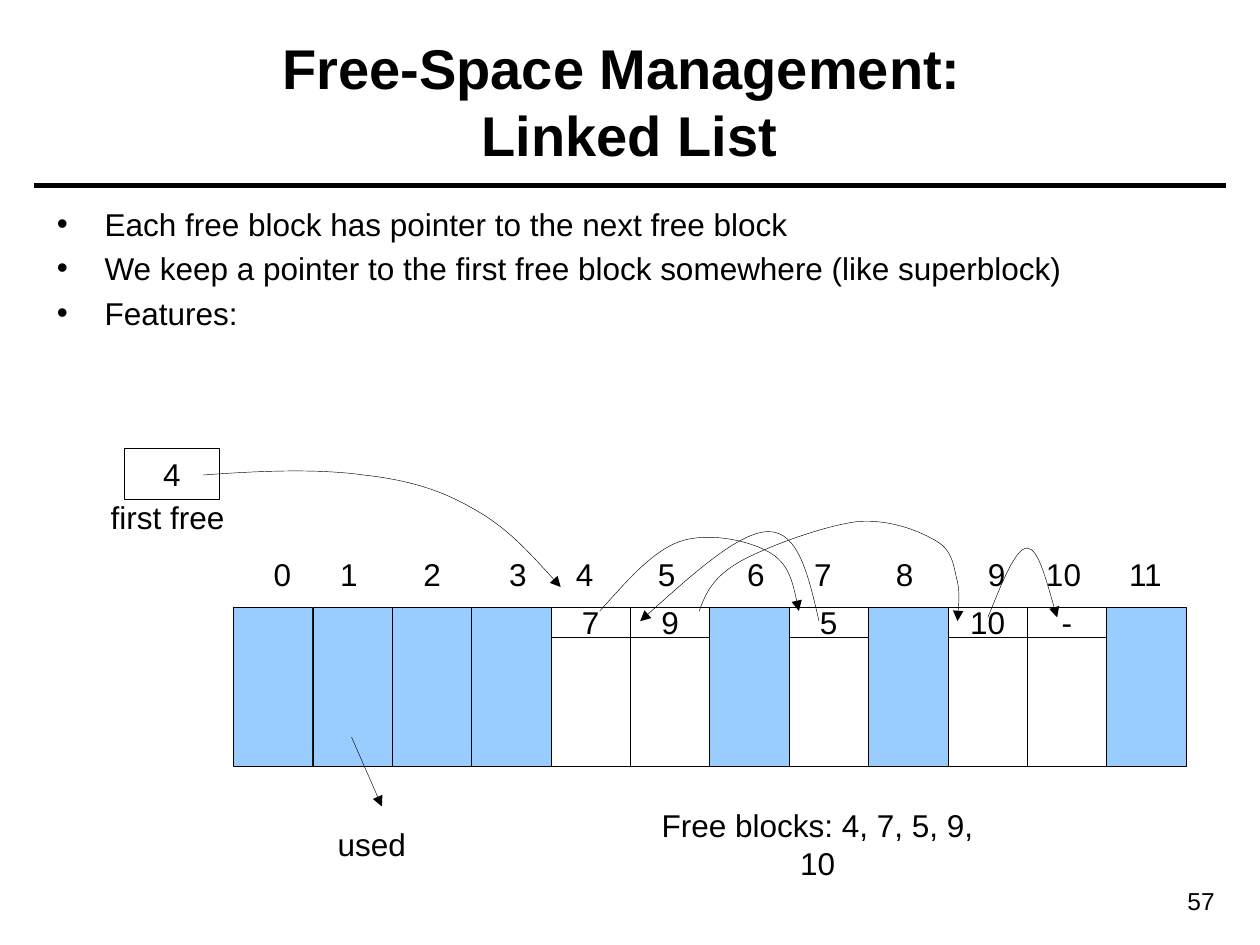
from dataclasses import dataclass
from typing import NamedTuple

from lxml import etree
from pptx import Presentation
from pptx.dml.color import RGBColor
from pptx.enum.shapes import MSO_CONNECTOR, MSO_SHAPE
from pptx.enum.text import MSO_ANCHOR, MSO_AUTO_SIZE, PP_ALIGN
from pptx.oxml.ns import qn
from pptx.util import Pt

LEFT, MID, RIGHT = PP_ALIGN.LEFT, PP_ALIGN.CENTER, PP_ALIGN.RIGHT
CENTRE = MSO_ANCHOR.MIDDLE
FIXED = MSO_AUTO_SIZE.NONE
RECT = MSO_SHAPE.RECTANGLE
STRAIGHT = MSO_CONNECTOR.STRAIGHT


@dataclass(frozen=True)
class Theme:
    font: str = "Arial"
    ink: RGBColor = RGBColor(0, 0, 0)
    used: RGBColor = RGBColor(0x99, 0xCC, 0xFF)
    title: float = 32
    body: float = 18
    page: float = 14
    thin: float = 0.25
    thick: float = 3


THEME = Theme()


class Box(NamedTuple):
    x: float
    y: float
    w: float
    h: float


class Label(NamedTuple):
    text: str
    box: Box
    size: float = THEME.body
    align: PP_ALIGN = MID
    wrap: bool = False


# Disk blocks: links maps each free block to the text of its pointer
LINKS = {4: "7", 5: "9", 7: "5", 9: "10", 10: "-"}
GRID = Box(133.4, 347, 45.36, 90.7)
STRIP = 17
TAG = 48  # wide enough for two digits plus the insets
CENTRES = [161.3, 199.4, 247, 295.9, 334.1, 380.9,
           432, 470.2, 517, 569.5, 607.7, 654.5]

BULLETS = [
    "Each free block has pointer to the next free block",
    "We keep a pointer to the first free block somewhere (like superblock)",
    "Features:",
]

LABELS = [
    Label("first free", Box(56.2, 280.8, 79.2, 28.8)),
    Label("used", Box(185.8, 468, 53.3, 28.8)),
    Label("Free blocks: 4, 7, 5, 9, 10", Box(370, 457.2, 194.4, 50), wrap=True),
    Label("57", Box(626.4, 502.6, 74.9, 24.5), THEME.page, RIGHT),
]

# Pointer curves: a start, then three points for each cubic piece
CURVES = [
    [(116, 271.5), (149, 269), (182, 267.8), (208, 271.5),
     (233.3, 274.3), (252, 280), (270.7, 290.9),
     (290.2, 301.7), (305.3, 319), (320.4, 335.5)],
    [(342.7, 349.2), (357.8, 332.6), (372.2, 315.4), (388.1, 309.6),
     (404.6, 303.8), (427.7, 308.9), (439.2, 315.4),
     (450.7, 321.8), (453.6, 335.5), (456.5, 349.2)],
    [(468, 355), (462.2, 329.8), (456.5, 303.8), (439.2, 303.8),
     (422.6, 303.8), (393.8, 329.8), (365.8, 355)],
    [(399.6, 349.2), (403.2, 339.1), (407.5, 329.8), (422.6, 321.1),
     (437.8, 312.5), (471.6, 300.2), (490.3, 298.1),
     (509, 296.6), (526.3, 303.8), (535.7, 309.6),
     (545, 315.4), (545, 324.7), (547.2, 332.6),
     (548.6, 339.8), (547.2, 354.2), (547.2, 355)],
    [(564.5, 352.8), (572.4, 333.4), (580.3, 313.2), (586.8, 313.2),
     (593.3, 313.2), (598.3, 333.4), (604.1, 352.8)],
]


def style(para, size: float, align: PP_ALIGN, bold: bool = False) -> None:
    para.alignment = align
    font = para.font
    font.name, font.size, font.bold = THEME.font, Pt(size), bold
    font.color.rgb = THEME.ink


def stroke(shape, width: float, arrow: bool = False) -> None:
    shape.line.color.rgb = THEME.ink
    shape.line.width = Pt(width)
    if arrow:
        line = shape._element.spPr.find(qn("a:ln"))
        etree.SubElement(line, qn("a:tailEnd"), type="triangle")


def add_label(slide, label: Label) -> None:
    frame = slide.shapes.add_textbox(*map(Pt, label.box)).text_frame
    frame.word_wrap = label.wrap
    frame.text = label.text
    style(frame.paragraphs[0], label.size, label.align)


def add_cell(slide, box: Box, text: str = "", fill: RGBColor | None = None) -> None:
    cell = slide.shapes.add_shape(RECT, *map(Pt, box))
    cell.shadow.inherit = False
    if fill is None:
        cell.fill.background()
    else:
        cell.fill.solid()
        cell.fill.fore_color.rgb = fill
    stroke(cell, THEME.thin)
    if text:
        frame = cell.text_frame
        frame.text = text
        frame.word_wrap = False
        frame.vertical_anchor = CENTRE
        style(frame.paragraphs[0], THEME.body, MID)


def add_line(slide, start: tuple[float, float], end: tuple[float, float],
             width: float, arrow: bool = False) -> None:
    line = slide.shapes.add_connector(STRAIGHT, *map(Pt, start + end))
    stroke(line, width, arrow)
    etree.SubElement(line._element.spPr, qn("a:effectLst"))


def add_curve(slide, points: list[tuple[float, float]]) -> None:
    start, *rest = [(Pt(x), Pt(y)) for x, y in points]
    pen = slide.shapes.build_freeform(*start)
    pen.add_line_segments(rest, close=False)
    curve = pen.convert_to_shape()
    curve.shadow.inherit = False
    curve.fill.background()
    stroke(curve, THEME.thin, arrow=True)
    # Join each three straight steps into one cubic step
    steps = list(curve._element.iter(qn("a:lnTo")))
    for i in range(0, len(steps), 3):
        cubic = etree.Element(qn("a:cubicBezTo"))
        steps[i].addprevious(cubic)
        for step in steps[i:i + 3]:
            cubic.append(step[0])
            step.getparent().remove(step)


def add_title(slide, text: str, box: Box) -> None:
    title = slide.shapes.title
    title.left, title.top, title.width, title.height = map(Pt, box)
    frame = title.text_frame
    frame.text = text
    frame.auto_size = FIXED
    frame.vertical_anchor = CENTRE
    style(frame.paragraphs[0], THEME.title, MID, bold=True)


def add_bullets(slide, lines: list[str], box: Box) -> None:
    frame = slide.shapes.add_textbox(*map(Pt, box)).text_frame
    frame.word_wrap = True
    frame.text = "\n".join(lines)
    for i, para in enumerate(frame.paragraphs):
        style(para, THEME.body, LEFT)
        para.space_before = Pt(3.8 if i else 0)
        props = para._p.get_or_add_pPr()
        props.set("marL", str(Pt(27.3)))
        props.set("indent", str(-Pt(27.3)))
        # Bullet marks stand before the default run style
        base = props.find(qn("a:defRPr"))
        base.addprevious(etree.Element(qn("a:buFont"), typeface=THEME.font))
        base.addprevious(etree.Element(qn("a:buChar"), char="•"))


def main() -> None:
    deck = Presentation()
    deck.slide_width, deck.slide_height = Pt(720), Pt(540)
    slide = deck.slides.add_slide(deck.slide_layouts[5])

    # Heading and bullets
    add_line(slide, (19.5, 105.8), (700.5, 105.8), THEME.thick)
    add_title(slide, "Free-Space Management: \vLinked List", Box(25.4, 12.4, 668.9, 90))
    add_bullets(slide, BULLETS, Box(25.4, 113.4, 668.9, 172.8))

    # Row of blocks with numbers and pointers
    for i, mid in enumerate(CENTRES):
        box = GRID._replace(x=GRID.x + i * GRID.w)
        add_cell(slide, box, fill=None if i in LINKS else THEME.used)
        if i in LINKS:
            add_cell(slide, box._replace(h=STRIP), LINKS[i])
        add_label(slide, Label(str(i), Box(mid - TAG / 2, 313.4, TAG, 28.8)))

    # Head of the list, arrows and captions
    add_cell(slide, Box(70.9, 256.3, 54.7, 28.8), "4")
    for points in CURVES:
        add_curve(slide, points)
    add_line(slide, (200.9, 421.2), (218.2, 460.8), THEME.thin, arrow=True)
    for label in LABELS:
        add_label(slide, label)

    deck.save("out.pptx")


if __name__ == "__main__":
    main()
